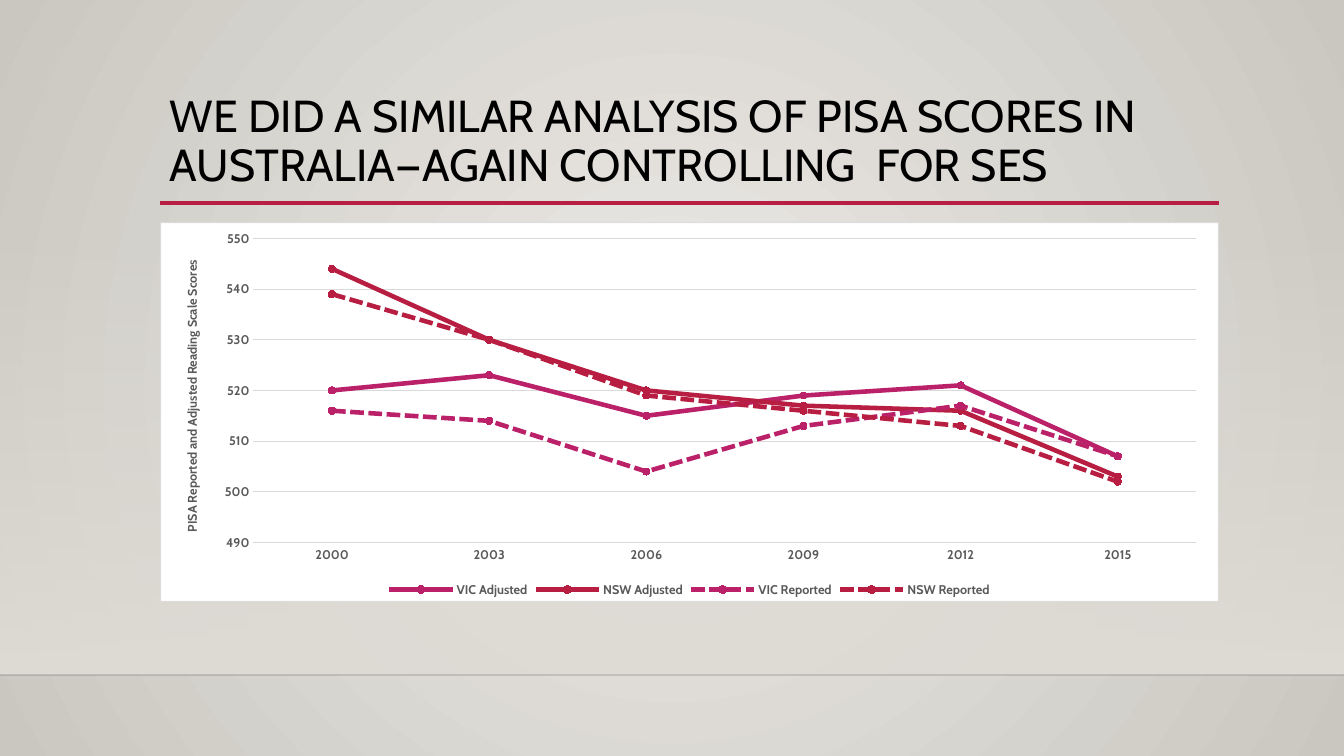
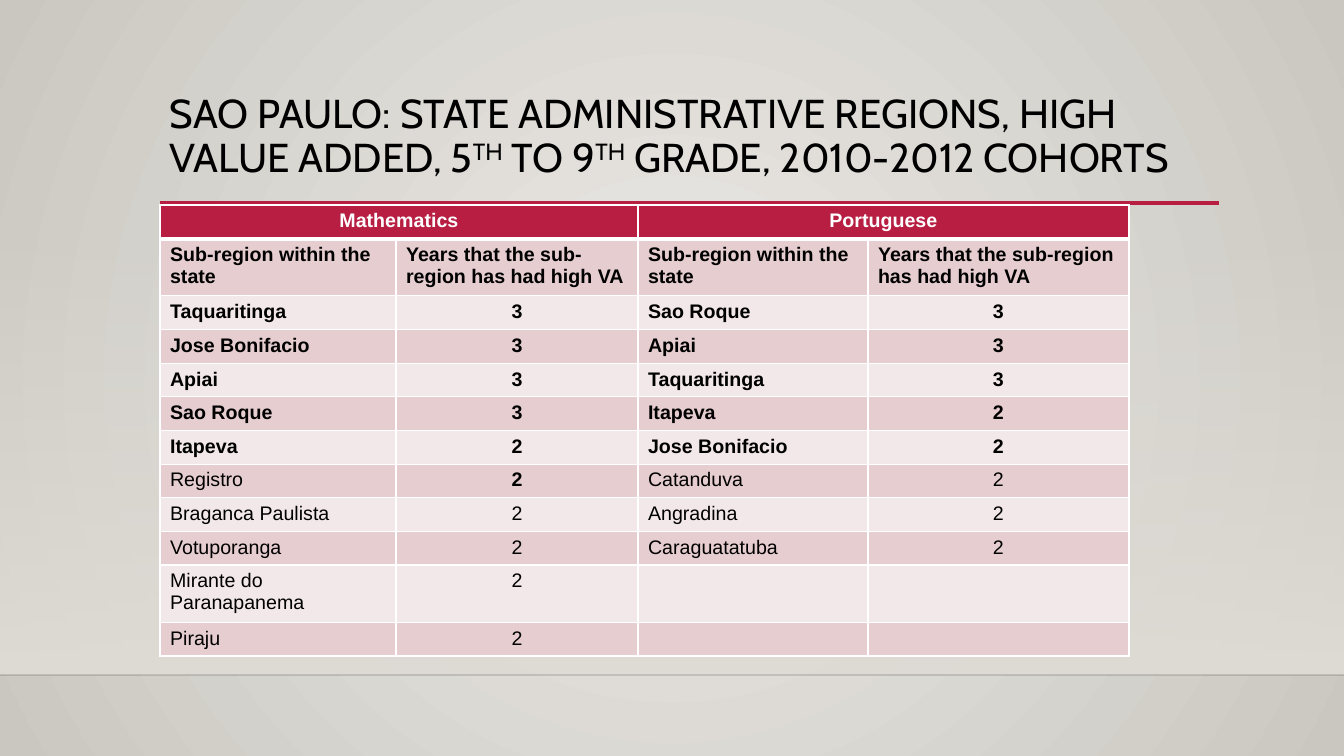
from lxml.etree import SubElement
from pptx import Presentation
from pptx.chart.data import CategoryChartData
from pptx.dml.color import RGBColor
from pptx.enum.chart import XL_CHART_TYPE as ChartType, XL_LEGEND_POSITION as LegendPosition
from pptx.enum.chart import XL_MARKER_STYLE as MarkerStyle, XL_TICK_MARK as TickMark
from pptx.enum.dml import MSO_LINE as LineDash
from pptx.enum.shapes import MSO_CONNECTOR as Connector, MSO_SHAPE as Shape
from pptx.enum.text import MSO_ANCHOR as Anchor, PP_ALIGN as Align
from pptx.oxml import parse_xml
from pptx.oxml.ns import nsdecls, qn
from pptx.util import Emu, Pt

SCALE = 914400 / 100.8  # EMU in one px
WIDTH, HEIGHT = 1344, 756
LEFT, CONTENT_WIDTH = 160, 1059

BLACK, WHITE, GREY, RULE_GREY = "000000", "FFFFFF", "595959", "D9D9D9"
RED, PURPLE = "B71E42", "BA2169"
BACK_LIGHT, BACK_DARK, BAND = "ECEAE7", "CAC7C1", "DFDBD5"
ROW_FILLS = ("F3E8E9", "E6CDCF")


def px(length):
    return Emu(round(length * SCALE))


def color(value):
    return RGBColor.from_string(value)


class Deck:
    """Holds the shared style and the current slide."""

    title_font, table_font = "Cabin", "Arial"

    def __init__(self):
        self.presentation = Presentation()
        self.presentation.slide_width = px(WIDTH)
        self.presentation.slide_height = px(HEIGHT)
        self.slide = None

    def new_slide(self):
        self.slide = self.presentation.slides.add_slide(self.presentation.slide_layouts[6])
        # Round background gradient
        self.gradient(self.slide.background.fill, BACK_LIGHT, BACK_DARK)
        gradient = self.slide._element.find(".//" + qn("a:gradFill"))
        gradient.remove(gradient.find(qn("a:lin")))
        circle = SubElement(gradient, qn("a:path"))
        circle.set("path", "circle")
        SubElement(circle, qn("a:fillToRect"), {side: "50000" for side in "ltrb"})
        # Band that fades in towards the floor line
        band = self.slide.shapes.add_shape(Shape.RECTANGLE, 0, px(223), px(WIDTH), px(452))
        band.shadow.inherit = False
        self.gradient(band.fill, BAND, BAND)
        band.fill.gradient_angle = 270
        self.alpha(band._element.spPr, 0)
        band.line.fill.background()
        # Floor line and title rule
        floor = self.line(0, WIDTH, 675, "000001", 1)
        self.alpha(floor._element.spPr, 20)
        self.line(LEFT, LEFT + CONTENT_WIDTH, 203, RED, 2.5)

    def gradient(self, fill, first, last):
        fill.gradient()
        for stop, value in zip(fill.gradient_stops, (first, last)):
            stop.color.rgb = color(value)

    def alpha(self, element, percent):
        """Sets the opacity of the first colour found in the element."""
        first_color = element.find(".//" + qn("a:srgbClr"))
        SubElement(first_color, qn("a:alpha"), val=str(percent * 1000))

    def line(self, left, right, top, value, width):
        line = self.slide.shapes.add_connector(
            Connector.STRAIGHT, px(left), px(top), px(right), px(top))
        line.line.color.rgb = color(value)
        line.line.width = Pt(width)
        SubElement(line._element.spPr, qn("a:effectLst"))
        return line

    def style(self, font, name, size, value, bold=False):
        font.name, font.size, font.bold = name, Pt(size), bold
        font.color.rgb = color(value)

    def title(self, parts, size, height):
        """Writes the parts in turn as normal and raised text."""
        box = self.slide.shapes.add_textbox(px(LEFT), px(89), px(CONTENT_WIDTH), px(height))
        frame = box.text_frame
        frame.word_wrap = True
        frame.vertical_anchor = Anchor.TOP
        paragraph = frame.paragraphs[0]
        paragraph.line_spacing = 0.9
        for index, text in enumerate(parts):
            run = paragraph.add_run()
            run.text = text
            self.style(run.font, self.title_font, size, BLACK)
            if index % 2:
                run.font._element.set("baseline", "30000")

    def line_chart(self, top, height, categories, series_list, axis_title, plot_area):
        data = CategoryChartData()
        data.categories = categories
        for name, values, _, _ in series_list:
            data.add_series(name, values)
        chart = self.slide.shapes.add_chart(
            ChartType.LINE_MARKERS, px(LEFT), px(top), px(CONTENT_WIDTH), px(height), data).chart
        chart.has_title = False
        self.style(chart.font, self.title_font, 10, BLACK)
        self.chart_frame(chart, plot_area, top, height)

        # Series
        chart.plots[0].vary_by_categories = False
        for series, (_, _, value, dash) in zip(chart.plots[0].series, series_list):
            series.smooth = False
            series.format.line.color.rgb = color(value)
            series.format.line.width = Pt(3.25)
            series.format.line.dash_style = dash
            series.marker.style = MarkerStyle.CIRCLE
            series.marker.size = 5
            series.marker.format.fill.solid()
            series.marker.format.fill.fore_color.rgb = color(value)
            series.marker.format.line.color.rgb = color(value)

        # Axes
        category_axis, value_axis = chart.category_axis, chart.value_axis
        for axis in (category_axis, value_axis):
            axis.major_tick_mark = axis.minor_tick_mark = TickMark.NONE
            self.style(axis.tick_labels.font, self.title_font, 9, GREY, True)
        value_axis.minimum_scale, value_axis.maximum_scale = 490, 550
        value_axis.major_unit = 10
        value_axis.format.line.fill.background()
        for line in (category_axis.format.line, value_axis.major_gridlines.format.line):
            line.color.rgb = color(RULE_GREY)
            line.width = Pt(0.75)
        run = value_axis.axis_title.text_frame.paragraphs[0].add_run()
        run.text = axis_title
        self.style(run.font, self.title_font, 9, GREY, True)

        # Legend
        chart.has_legend = True
        chart.legend.position = LegendPosition.BOTTOM
        chart.legend.include_in_layout = False
        self.style(chart.legend.font, self.title_font, 9, GREY, True)

    def chart_frame(self, chart, plot_area, top, height):
        """Sets the white chart area and the place of the plot inside it."""
        chart_element = chart._chartSpace.find(qn("c:chart"))
        chart_element.addnext(parse_xml(
            f'<c:spPr {nsdecls("c", "a")}>'
            f'<a:solidFill><a:srgbClr val="{WHITE}"/></a:solidFill>'
            f'<a:ln w="{Pt(0.75)}"><a:solidFill><a:srgbClr val="{RULE_GREY}">'
            '<a:alpha val="71000"/></a:srgbClr></a:solidFill></a:ln></c:spPr>'))
        plot = chart_element.find(qn("c:plotArea"))
        for old_layout in plot.findall(qn("c:layout")):
            plot.remove(old_layout)
        layout = parse_xml(f'<c:layout {nsdecls("c")}/>')
        plot.insert(0, layout)
        manual = SubElement(layout, qn("c:manualLayout"))
        plot_left, plot_top, plot_width, plot_height = plot_area
        settings = {
            "layoutTarget": "inner", "xMode": "edge", "yMode": "edge",
            "x": (plot_left - LEFT) / CONTENT_WIDTH, "y": (plot_top - top) / height,
            "w": plot_width / CONTENT_WIDTH, "h": plot_height / height,
        }
        for name, value in settings.items():
            SubElement(manual, qn("c:" + name), val=str(value))

    def table(self, top, column_widths, row_height, rows, is_bold):
        table = self.slide.shapes.add_table(
            len(rows), len(column_widths), px(LEFT), px(top),
            px(sum(column_widths)), px(row_height * len(rows))).table
        table.first_row = table.horz_banding = False
        for column, width in zip(table.columns, column_widths):
            column.width = px(width)
        for row_index, row in enumerate(rows):
            header = row_index == 0
            for column_index, text in enumerate(row):
                cell = table.cell(row_index, column_index)
                self.borders(cell, 3 if header else 1)
                cell.fill.solid()
                cell.fill.fore_color.rgb = color(RED if header else ROW_FILLS[row_index % 2])
                paragraph = cell.text_frame.paragraphs[0]
                if header or text.isdigit():
                    paragraph.alignment = Align.CENTER
                if text:
                    run = paragraph.add_run()
                    run.text = text
                    self.style(run.font, self.table_font, 14, WHITE if header else BLACK,
                               is_bold(row_index, column_index))
                else:
                    SubElement(paragraph._p, qn("a:endParaRPr"), sz="1400")
        for column_index in (0, 2):
            table.cell(0, column_index).merge(table.cell(0, column_index + 1))

    def borders(self, cell, bottom_width):
        properties = cell._tc.get_or_add_tcPr()
        for side, width in zip("LRTB", (1, 1, 1, bottom_width)):
            line = SubElement(properties, qn("a:ln" + side), w=str(Pt(width)))
            fill = SubElement(line, qn("a:solidFill"))
            SubElement(fill, qn("a:srgbClr"), val=WHITE)


def pisa_slide(deck):
    deck.new_slide()
    deck.title(["WE DID A SIMILAR ANALYSIS OF PISA SCORES IN "
                "AUSTRALIA—AGAIN CONTROLLING  FOR SES"], 32, 116)
    solid, dashed = LineDash.SOLID, LineDash.SQUARE_DOT
    deck.line_chart(
        222, 380,
        ["2000", "2003", "2006", "2009", "2012", "2015"],
        [
            ("VIC Adjusted", (520, 523, 515, 519, 521, 507), PURPLE, solid),
            ("NSW Adjusted", (544, 530, 520, 517, 516, 503), RED, solid),
            ("VIC Reported", (516, 514, 504, 513, 517, 507), PURPLE, dashed),
            ("NSW Reported", (539, 530, 519, 516, 513, 502), RED, dashed),
        ],
        "PISA Reported and Adjusted Reading Scale Scores",
        (253, 238, 944, 305))


def sao_paulo_slide(deck):
    deck.new_slide()
    deck.title(["SAO PAULO: STATE ADMINISTRATIVE REGIONS, HIGH VALUE ADDED, 5", "TH",
                " TO 9", "TH", " GRADE, 2010-2012 COHORTS"], 28.8, 96)
    headings = ("Sub-region within the state", "Years that the sub-region has had high VA")
    rows = [
        ("Mathematics", "", "Portuguese", ""),
        headings * 2,
        ("Taquaritinga", "3", "Sao Roque", "3"),
        ("Jose Bonifacio", "3", "Apiai", "3"),
        ("Apiai", "3", "Taquaritinga", "3"),
        ("Sao Roque", "3", "Itapeva", "2"),
        ("Itapeva", "2", "Jose Bonifacio", "2"),
        ("Registro", "2", "Catanduva", "2"),
        ("Braganca Paulista", "2", "Angradina", "2"),
        ("Votuporanga", "2", "Caraguatatuba", "2"),
        ("Mirante do Paranapanema", "2", "", ""),
        ("Piraju", "2", "", ""),
    ]
    deck.table(205, (236, 242, 230, 261), 30, rows,
               lambda row, column: row <= 6 or (row, column) == (7, 1))


def main():
    deck = Deck()
    pisa_slide(deck)
    sao_paulo_slide(deck)
    deck.presentation.save("out.pptx")


if __name__ == "__main__":
    main()
